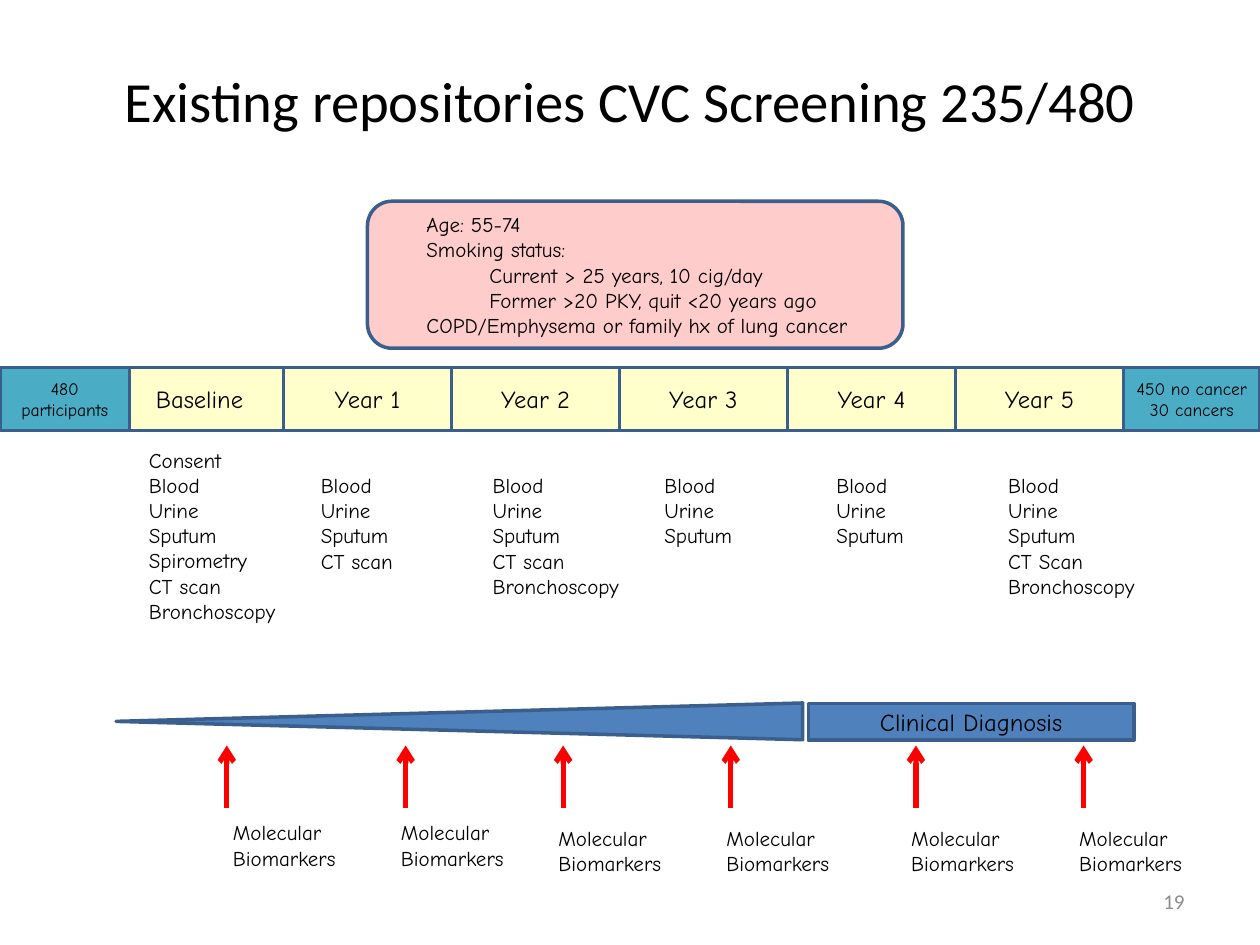
from dataclasses import dataclass

import lxml.etree
import pptx
import pptx.dml.color
import pptx.enum.shapes
import pptx.enum.text
import pptx.oxml.ns
import pptx.util

Pt = pptx.util.Pt
Color = pptx.dml.color.RGBColor
Shape = pptx.enum.shapes.MSO_SHAPE
Align = pptx.enum.text.PP_ALIGN
Anchor = pptx.enum.text.MSO_ANCHOR
qn = pptx.oxml.ns.qn


@dataclass(frozen=True)
class Theme:
    ink: str = "000000"
    muted: str = "8C8C8C"
    outline: str = "3A5F8C"
    visit: str = "FFFFCC"
    criteria: str = "FFCCCC"
    cohort: str = "4BACC6"
    progression: str = "4F81BD"
    arrow: str = "FF0000"
    heading_font: str = "Calibri"
    body_font: str = "Comic Neue"
    title_size: float = 32.4
    label_size: float = 14
    body_size: float = 12
    cohort_size: float = 10
    outline_width: float = 2
    arrow_width: float = 3


@dataclass(frozen=True)
class Box:
    left: float
    top: float
    width: float
    height: float

    def lengths(self) -> tuple:
        return tuple(Pt(n) for n in (self.left, self.top, self.width, self.height))


@dataclass(frozen=True)
class Visit:
    name: str
    samples: str
    samples_width: float


@dataclass(frozen=True)
class Biomarker:
    arrow_x: float
    label_left: float
    label_top: float


THEME = Theme()
LINE_HEIGHT = 14.4
INSET = 3.6

# Timeline cells
CELL_LEFT, CELL_TOP, CELL_WIDTH, CELL_HEIGHT = 66, 210, 96, 36
VISITS = [
    Visit("Baseline", "Consent\nBlood\nUrine\nSputum\nSpirometry\nCT scan\nBronchoscopy", 91.4),
    Visit("Year 1", "Blood\nUrine\nSputum\nCT scan", 58.3),
    Visit("Year 2", "Blood\nUrine\nSputum\nCT scan\nBronchoscopy", 90.7),
    Visit("Year 3", "Blood\nUrine\nSputum", 57.6),
    Visit("Year 4", "Blood\nUrine\nSputum", 57.6),
    Visit("Year 5", "Blood\nUrine\nSputum\nCT Scan\nBronchoscopy", 90.7),
]

# Sample lists below the cells
SAMPLES_LEFT, SAMPLES_TOP, SAMPLES_STEP = 78, 252, 98.2

# Biomarker arrows
ARROW_TOP, ARROW_BOTTOM = 426, 462
BIOMARKERS = [
    Biomarker(129.6, 126, 465),
    Biomarker(231.8, 222, 465),
    Biomarker(321.8, 312, 468),
    Biomarker(417.6, 408, 468),
    Biomarker(523.4, 513.6, 468),
    Biomarker(619.2, 609.6, 468),
]

CRITERIA = (
    "Age: 55-74\nSmoking status:\n\tCurrent > 25 years, 10 cig/day\n"
    "\tFormer >20 PKY, quit <20 years ago\nCOPD/Emphysema or family hx of lung cancer"
)


def write(shape, text: str, size: float, align=Align.LEFT, anchor=Anchor.TOP,
          font: str = THEME.body_font, color: str = THEME.ink) -> None:
    frame = shape.text_frame
    frame.word_wrap = True
    frame.vertical_anchor = anchor
    frame.text = text
    for para in frame.paragraphs:
        para.alignment = align
        para.font.name = font
        para.font.size = Pt(size)
        para.font.color.rgb = Color.from_string(color)


def add_shape(page, kind, box: Box, fill: str):
    shape = page.shapes.add_shape(kind, *box.lengths())
    shape.shadow.inherit = False
    shape.fill.solid()
    shape.fill.fore_color.rgb = Color.from_string(fill)
    shape.line.color.rgb = Color.from_string(THEME.outline)
    shape.line.width = Pt(THEME.outline_width)
    return shape


def add_label(page, box: Box, fill: str, text: str, size: float = THEME.label_size) -> None:
    shape = add_shape(page, Shape.RECTANGLE, box, fill)
    write(shape, text, size, Align.CENTER, Anchor.MIDDLE)


def add_text(page, box: Box, text: str, size: float = THEME.body_size, **style):
    shape = page.shapes.add_textbox(*box.lengths())
    write(shape, text, size, **style)
    return shape


def add_up_arrow(page, x: float) -> None:
    arrow = page.shapes.add_connector(
        pptx.enum.shapes.MSO_CONNECTOR.STRAIGHT,
        Pt(x), Pt(ARROW_TOP), Pt(x), Pt(ARROW_BOTTOM))
    arrow.line.color.rgb = Color.from_string(THEME.arrow)
    arrow.line.width = Pt(THEME.arrow_width)
    properties = arrow.element.find(qn("p:spPr"))
    lxml.etree.SubElement(properties.find(qn("a:ln")), qn("a:headEnd"), type="arrow")
    lxml.etree.SubElement(properties, qn("a:effectLst"))


def add_visit(page, index: int, visit: Visit) -> None:
    cell = Box(CELL_LEFT + index * CELL_WIDTH, CELL_TOP, CELL_WIDTH, CELL_HEIGHT)
    add_label(page, cell, THEME.visit, visit.name)
    is_baseline = index == 0
    area = Box(SAMPLES_LEFT + index * SAMPLES_STEP, SAMPLES_TOP,
               visit.samples_width, 124 if is_baseline else 109)
    samples = add_text(page, area, visit.samples)
    # Later visits start one line down, level with the baseline's blood sample
    if not is_baseline:
        samples.text_frame.margin_top = Pt(INSET + LINE_HEIGHT)


def add_criteria(page) -> None:
    shape = add_shape(page, Shape.ROUNDED_RECTANGLE, Box(210, 115, 306, 84), THEME.criteria)
    write(shape, CRITERIA, THEME.body_size, anchor=Anchor.MIDDLE)
    for para in shape.text_frame.paragraphs:
        properties = para._p.get_or_add_pPr()
        properties.set("marL", str(Pt(22.5)))
        properties.set("indent", "0")


def main() -> None:
    deck = pptx.Presentation()
    deck.slide_width, deck.slide_height = Pt(720), Pt(540)
    page = deck.slides.add_slide(deck.slide_layouts[6])

    # Title and entry criteria
    add_text(page, Box(36, 12, 648, 90), "Existing repositories CVC Screening 235/480",
             THEME.title_size, align=Align.CENTER, anchor=Anchor.MIDDLE,
             font=THEME.heading_font)
    add_criteria(page)

    # Timeline between the starting and final cohorts
    for index, visit in enumerate(VISITS):
        add_visit(page, index, visit)
    timeline_end = CELL_LEFT + len(VISITS) * CELL_WIDTH
    add_label(page, Box(0, CELL_TOP, 74, CELL_HEIGHT), THEME.cohort,
              "480 participants", THEME.cohort_size)
    add_label(page, Box(timeline_end, CELL_TOP, 720 - timeline_end, CELL_HEIGHT),
              THEME.cohort, "450 no cancer\n30 cancers", THEME.cohort_size)

    # Progression to diagnosis
    wedge = add_shape(page, Shape.ISOSCELES_TRIANGLE, Box(252, 216, 21, 392.4),
                      THEME.progression)
    wedge.rotation = 270
    add_label(page, Box(462, 402, 186, 21), THEME.progression, "Clinical Diagnosis")

    # Biomarker arrows and labels
    for marker in BIOMARKERS:
        add_up_arrow(page, marker.arrow_x)
        add_text(page, Box(marker.label_left, marker.label_top, 78.5, 51),
                 "Molecular\nBiomarkers")

    # Page number
    add_text(page, Box(516, 500.5, 168, 28.75), "19", align=Align.RIGHT,
             anchor=Anchor.MIDDLE, font=THEME.heading_font, color=THEME.muted)

    deck.save("out.pptx")


if __name__ == "__main__":
    main()
